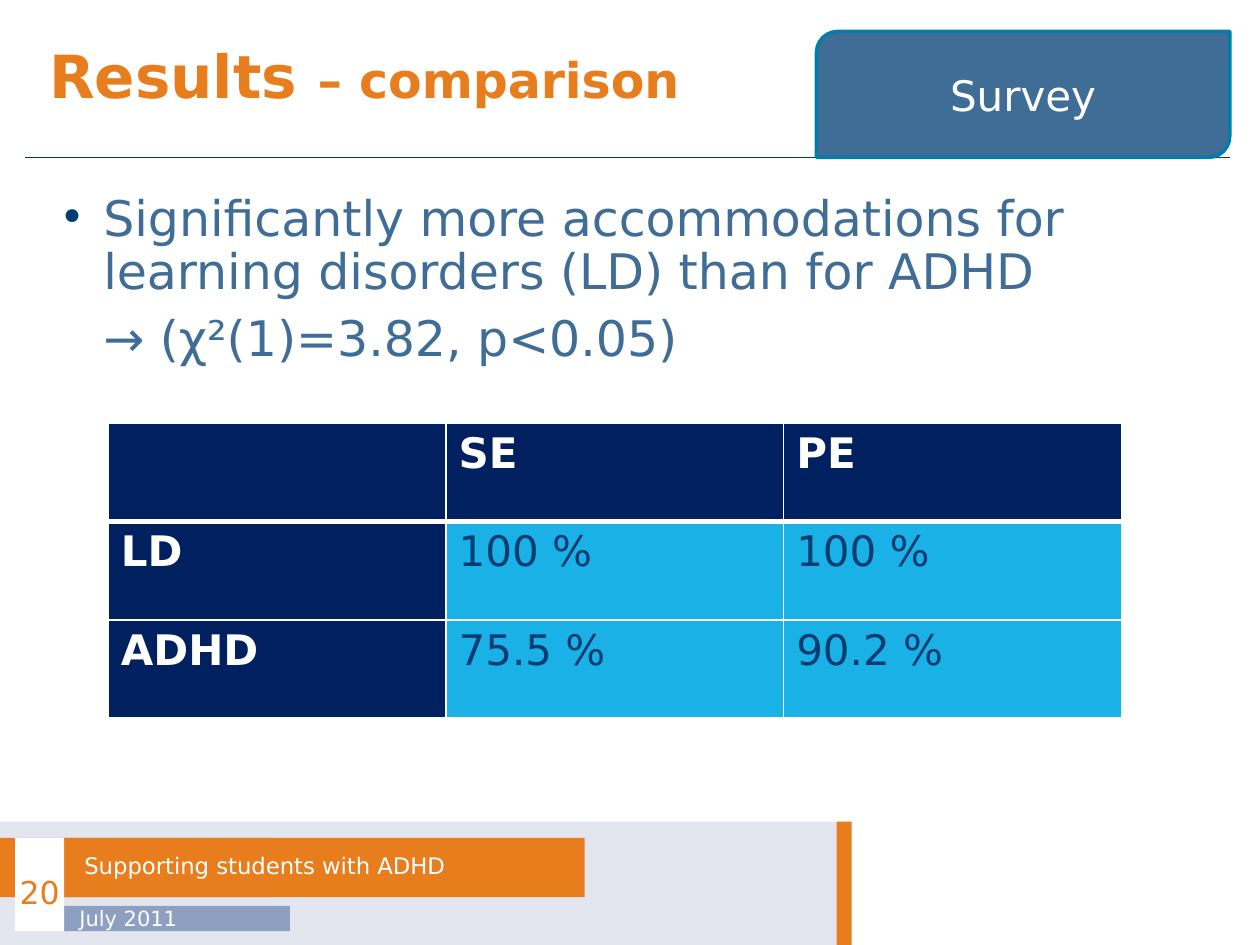
from lxml import etree
from pptx import Presentation
from pptx import util as u
from pptx.dml.color import RGBColor
from pptx.enum import shapes, text
from pptx.oxml.ns import qn

HUE = {"orange": "E87D1E", "pale": "E3E6EF", "mist": "8EA0C2", "white": "FFFFFF",
       "ink": "003C72", "steel": "406D96", "teal": "007DA9", "navy": "002060",
       "sky": "1AB1E7"}
FACE = "DejaVu Sans"
COLS, ROWS = 100, 75
UNIT = u.Inches(0.1)  # side of one grid square
MID = text.MSO_ANCHOR.MIDDLE
CENTER = text.PP_ALIGN.CENTER


def rgb(name):
    return RGBColor.from_string(HUE[name])


def grid(*vals):
    return [round(v * UNIT) for v in vals]


def inner(box, x, y, w, h):
    """Grid box placed from the corner of a parent box."""
    return box[0] + x, box[1] + y, w, h


def style(item, **fmt):
    for key, val in fmt.items():
        setattr(item, key, val)


def write(para, words, size, hue, bold=False):
    run = para.add_run()
    run.text = words
    style(run.font, name=FACE, size=u.Pt(size), bold=bold)
    run.font.color.rgb = rgb(hue)


def frame(shape, pad, anchor=MID, wrap=True):
    tf = shape.text_frame
    sides = ("margin_left", "margin_top", "margin_right", "margin_bottom")
    style(tf, word_wrap=wrap, vertical_anchor=anchor, **dict(zip(sides, grid(*pad))))
    return tf


def block(slide, box, fill, edge=None, kind=shapes.MSO_SHAPE.RECTANGLE):
    shape = slide.shapes.add_shape(kind, *grid(*box))
    shape.shadow.inherit = False
    shape.fill.solid()
    shape.fill.fore_color.rgb = rgb(fill)
    if edge:
        shape.line.color.rgb = rgb(edge)
        shape.line.width = u.Pt(2)
    else:
        shape.line.fill.background()
    return shape


def label(shape, words, size, hue, pad, wrap=True, **fmt):
    para = frame(shape, pad, wrap=wrap).paragraphs[0]
    style(para, **{"alignment": text.PP_ALIGN.LEFT, **fmt})
    write(para, words, size, hue)


def head(slide, box):
    x, y, w, h = box
    # Rule under the title
    ends = grid(x + 2, y + h, x + w - 2.4, y + h)
    rule = slide.shapes.add_connector(shapes.MSO_CONNECTOR.STRAIGHT, *ends)
    rule.line.color.rgb = rgb("ink")
    rule.line.width = u.Pt(0.5)
    etree.SubElement(rule._element.spPr, qn("a:effectLst"))
    # Title
    title = slide.shapes.add_textbox(*grid(*box))
    para = frame(title, (3.9, 2, 3.9, 1.6)).paragraphs[0]
    para.line_spacing = 0.8
    write(para, "Results ", 34, "orange", True)
    write(para, "– comparison", 28, "orange", True)
    # Section tab
    tab = block(slide, inner(box, 64.8, 2.5, 32.8, 10), "steel", "teal",
                shapes.MSO_SHAPE.ROUND_2_DIAG_RECTANGLE)
    label(tab, "Survey", 24, "white", (1, 0.5, 1, 0.5), alignment=CENTER)


def bullet(para):
    props = para._p.get_or_add_pPr()
    props.set("indent", str(-grid(3.5)[0]))
    hue = etree.SubElement(props, qn("a:buClr"))
    etree.SubElement(hue, qn("a:srgbClr")).set("val", HUE["ink"])
    etree.SubElement(props, qn("a:buSzPct")).set("val", "90000")
    etree.SubElement(props, qn("a:buFont")).set("typeface", FACE)
    etree.SubElement(props, qn("a:buChar")).set("char", "•")


def body(slide, box):
    shape = slide.shapes.add_textbox(*grid(*box))
    tf = frame(shape, (4.7, 2.8, 4.7, 1.6), text.MSO_ANCHOR.TOP)
    claim, proof = tf.paragraphs[0], tf.add_paragraph()
    for para, words in (
            (claim, "Significantly more accommodations for learning disorders (LD) than for ADHD"),
            (proof, "→ (χ²(1)=3.82, p<0.05)")):
        style(para, line_spacing=0.9, space_after=u.Pt(4))
        para._p.get_or_add_pPr().set("marL", str(grid(3.5)[0]))
        write(para, words, 28, "steel")
    proof.space_before = u.Pt(4)
    bullet(claim)


def edges(cell, low):
    props = cell._tc.get_or_add_tcPr()
    for spot, (tag, width) in enumerate((("lnL", 1), ("lnR", 1), ("lnT", 1), ("lnB", low))):
        line = etree.Element(qn("a:" + tag), w=str(u.Pt(width)))
        fill = etree.SubElement(line, qn("a:solidFill"))
        etree.SubElement(fill, qn("a:srgbClr")).set("val", HUE["white"])
        props.insert(spot, line)


def rates(slide, box):
    data = (("", "SE", "PE"),
            ("LD", "100 %", "100 %"),
            ("ADHD", "75.5 %", "90.2 %"))
    table = slide.shapes.add_table(len(data), len(data[0]), *grid(*box)).table
    for r, row in enumerate(data):
        for c, words in enumerate(row):
            cell = table.cell(r, c)
            lead = r == 0 or c == 0
            cell.fill.solid()
            cell.fill.fore_color.rgb = rgb("navy" if lead else "sky")
            edges(cell, 1 if r else 3)
            if words:
                write(cell.text_frame.paragraphs[0], words, 24,
                      "white" if lead else "ink", lead)


def base(slide, box):
    # Bands
    for part, fill in (((0, 0, 67.2, 9.8), "pale"),
                       ((0, 1.3, 21.6, 4.7), "orange"),
                       ((66.4, 0, 1.2, 9.8), "orange")):
        block(slide, inner(box, *part), fill)
    # Date, talk name and page number
    date = block(slide, inner(box, 5.1, 6.7, 17.9, 2), "mist")
    label(date, "July 2011", 12, "white", (1.2, 0, 1.2, 0), wrap=False)
    talk = block(slide, inner(box, 5.1, 1.3, 41.3, 4.7), "orange")
    label(talk, "Supporting students with ADHD", 13, "white", (1.6, 0, 1.6, 0),
          line_spacing=0.9)
    page = block(slide, inner(box, 1.2, 1.3, 3.9, 7.4), "white")
    label(page, "20", 18, "orange", (0, 1.2, 0, 0), wrap=False, alignment=CENTER)


def main():
    deck = Presentation()
    deck.slide_width, deck.slide_height = grid(COLS, ROWS)
    slide = deck.slides.add_slide(deck.slide_layouts[6])
    base(slide, (0, 65.2, COLS, 9.8))
    body(slide, (0, 12.6, COLS, 51.8))
    rates(slide, (8.6, 33.6, 80.4, 23.4))
    head(slide, (0, 0, COLS, 12.5))
    deck.save("out.pptx")


if __name__ == "__main__":
    main()
